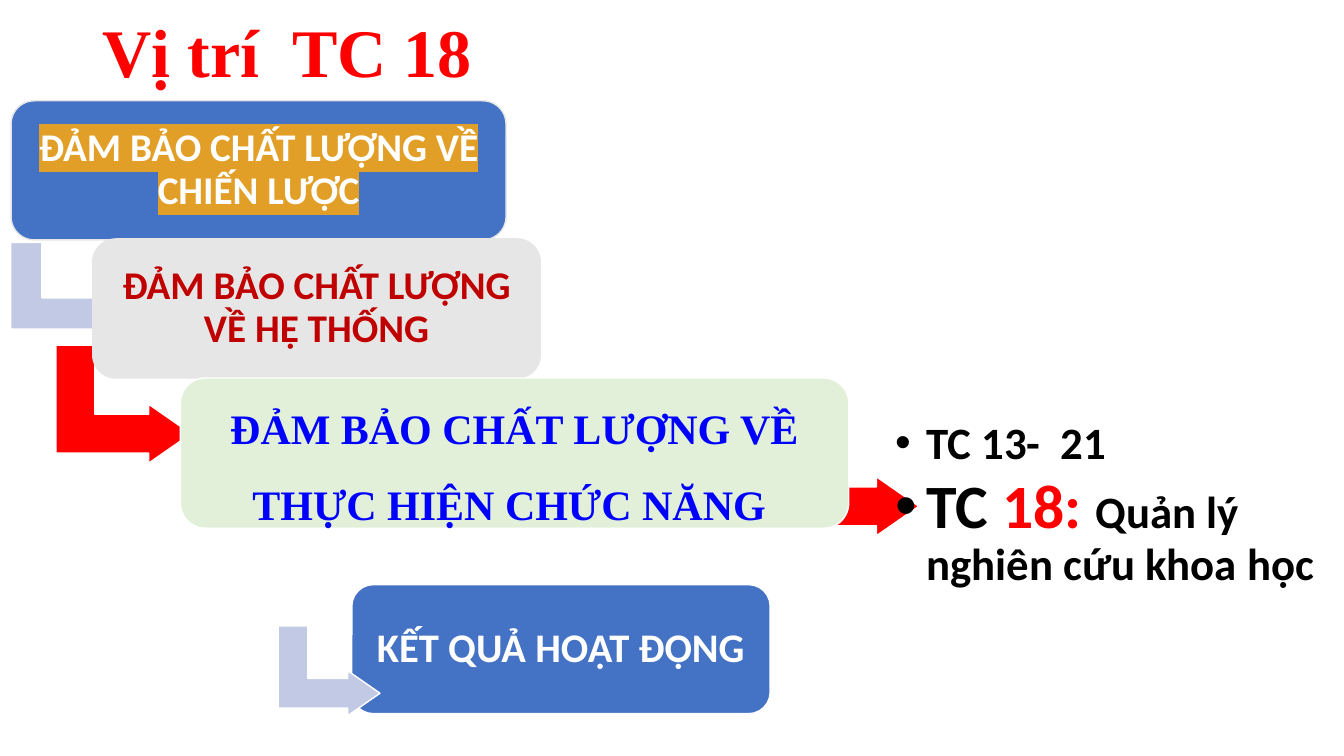
import pptx
import pptx.util
import pptx.dml.color
import pptx.enum.shapes
import pptx.enum.text
import pptx.oxml
import pptx.oxml.ns

SHAPES = pptx.enum.shapes.MSO_SHAPE
ALIGN = pptx.enum.text.PP_ALIGN
ANCHOR = pptx.enum.text.MSO_ANCHOR
AUTO_SIZE = pptx.enum.text.MSO_AUTO_SIZE


def color(hex_string):
    return pptx.dml.color.RGBColor.from_string(hex_string)


class Deck:
    sans, serif = "Calibri", "Times New Roman"
    red, white, black = "FF0000", "FFFFFF", "000000"
    blue, pale_blue, gray, green = "4472C4", "C1C9E4", "E7E6E6", "E2F0D9"
    dark_red, text_blue, amber = "C00000", "0000FF", "E19F27"
    columns, rows = 133.33, 75

    def __init__(self):
        self.presentation = pptx.Presentation()
        self.presentation.slide_width = pptx.util.Inches(13.33)
        self.presentation.slide_height = pptx.util.Inches(7.5)
        self.slide = self.presentation.slides.add_slide(self.presentation.slide_layouts[1])

    def place(self, column, row, width, height):
        across = self.presentation.slide_width / self.columns
        down = self.presentation.slide_height / self.rows
        return [round(column * across), round(row * down), round(width * across), round(height * down)]

    def move(self, shape, cell):
        shape.left, shape.top, shape.width, shape.height = self.place(*cell)

    def frame(self, shape, margin):
        frame = shape.text_frame
        frame.word_wrap = True
        frame.auto_size = AUTO_SIZE.NONE
        frame.vertical_anchor = ANCHOR.MIDDLE
        for side in ("left", "top", "right", "bottom"):
            setattr(frame, f"margin_{side}", pptx.util.Inches(margin))
        return frame

    def font(self, font, size, hex_string, name):
        font.size = pptx.util.Pt(size)
        font.name = name
        font.bold = True
        font.color.rgb = color(hex_string)

    def space(self, paragraph, alignment, line, after):
        paragraph.alignment = alignment
        paragraph.line_spacing = line
        paragraph.space_before = pptx.util.Pt(0)
        paragraph.space_after = pptx.util.Pt(after)

    def outline_shape(self, kind, cell, fill, line):
        shape = self.slide.shapes.add_shape(kind, *self.place(*cell))
        shape.shadow.inherit = False
        shape.fill.solid()
        shape.fill.fore_color.rgb = color(fill)
        shape.line.color.rgb = color(line)
        shape.line.width = pptx.util.Pt(1)
        return shape

    def title(self, text, cell, size):
        shape = self.slide.shapes.title
        self.move(shape, cell)
        frame = self.frame(shape, 0.1)
        frame.text = text
        self.space(frame.paragraphs[0], ALIGN.LEFT, 0.9, 0)
        self.font(frame.paragraphs[0].font, size, self.red, self.serif)

    def arrow(self, cell, fill):
        shape = self.outline_shape(SHAPES.BENT_UP_ARROW, cell, fill, self.white)
        shape.rotation = 90
        for index, value in enumerate((0.33, 0.25, 0.36)):
            shape.adjustments[index] = value

    def box(self, text, cell, fill, line, text_color, size=28, name=sans, spacing=0.9, after=0):
        shape = self.outline_shape(SHAPES.ROUNDED_RECTANGLE, cell, fill, line)
        frame = self.frame(shape, 0.12)
        frame.text = text
        paragraph = frame.paragraphs[0]
        self.space(paragraph, ALIGN.CENTER, spacing, after)
        self.font(paragraph.font, size, text_color, name)
        return paragraph.runs[0]

    def highlight(self, run, hex_string):
        namespace = pptx.oxml.ns.nsdecls("a")
        mark = pptx.oxml.parse_xml(f'<a:highlight {namespace}><a:srgbClr val="{hex_string}"/></a:highlight>')
        run.font._element.insert(0, mark)

    def bullets(self, items, cell):
        shape = self.slide.placeholders[1]
        self.move(shape, cell)
        self.slide.shapes._spTree.append(shape._element)
        frame = self.frame(shape, 0.13)
        for index, item in enumerate(items):
            paragraph = frame.add_paragraph() if index else frame.paragraphs[0]
            self.space(paragraph, ALIGN.LEFT, 0.9, 5)
            properties = paragraph._p.get_or_add_pPr()
            properties.set("marL", str(pptx.util.Inches(0.31)))
            properties.set("indent", str(pptx.util.Inches(-0.31)))
            for text, size, hex_string in item:
                run = paragraph.add_run()
                run.text = text
                self.font(run.font, size, hex_string, self.sans)


def main():
    deck = Deck()
    deck.title("Vị trí  TC 18", (9.2, 1.4, 115, 8.2), 48.6)
    deck.arrow((4.5, 20.6, 9.4, 16.3), deck.pale_blue)
    strategy = deck.box("ĐẢM BẢO CHẤT LƯỢNG VỀ CHIẾN LƯỢC", (1.1, 10, 49.1, 13.8),
                        deck.blue, deck.gray, deck.white)
    deck.highlight(strategy, deck.amber)
    deck.arrow((6.4, 33.4, 11.7, 13.4), deck.red)
    deck.box("ĐẢM BẢO CHẤT LƯỢNG VỀ HỆ THỐNG", (9.2, 23.7, 44.4, 13.8),
             deck.gray, deck.gray, deck.dark_red)
    deck.arrow((78.6, 40.6, 11.7, 13.4), deck.red)
    deck.box("ĐẢM BẢO CHẤT LƯỢNG VỀ THỰC HIỆN CHỨC NĂNG ", (17.9, 37.5, 66.3, 14.9),
             deck.green, deck.white, deck.text_blue, 30, deck.serif, 1.5, 6)
    deck.box("KẾT QUẢ HOẠT ĐỘNG", (34.9, 58, 41.5, 12.8),
             deck.blue, deck.white, deck.white, 29)
    deck.arrow((28.2, 61.5, 8.9, 10.1), deck.pale_blue)
    deck.bullets([
        [("TC 13-  21", 32, deck.black)],
        [("TC ", 44, deck.black), ("18: ", 44, deck.red),
         ("Quản lý nghiên cứu khoa học", 32, deck.black)],
    ], (87.5, 40.7, 44.8, 18.9))
    deck.presentation.save("out.pptx")


if __name__ == "__main__":
    main()
